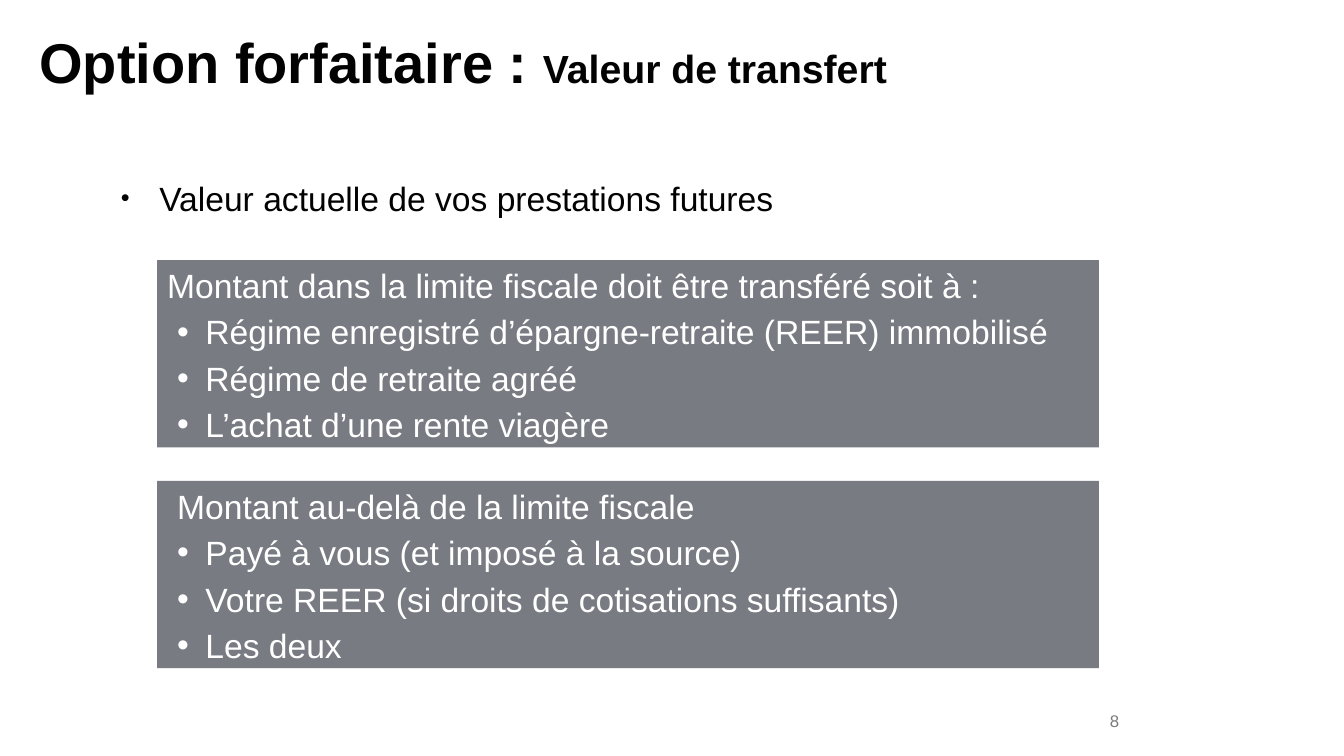
"""Build the slide on the transfer value of the lump-sum option."""
import lxml.etree
import pptx
import pptx.dml.color
import pptx.enum.shapes
import pptx.enum.text
import pptx.oxml.ns
import pptx.util

WIDE, HIGH = 13.33, 7.5
FONT = "Arial"
HUES = {"ink": "020202", "panel": "4B4F59", "white": "FFFFFF", "number": "797B7D"}
ALIGN = pptx.enum.text.PP_ALIGN
ANCHOR = pptx.enum.text.MSO_ANCHOR
PANELS = [
    ("Montant dans la limite fiscale doit être transféré soit à :", 0,
     ["Régime enregistré d’épargne-retraite (REER) immobilisé",
      "Régime de retraite agréé",
      "L’achat d’une rente viagère"]),
    ("Montant au-delà de la limite fiscale", 0.1,
     ["Payé à vous (et imposé à la source)",
      "Votre REER (si droits de cotisations suffisants)",
      "Les deux"]),
]


def hue(name):
    """Return a named colour."""
    return pptx.dml.color.RGBColor.from_string(HUES[name])


def span(left, top, width, height):
    """Turn percentages of the slide into lengths."""
    return [pptx.util.Inches(share * side / 100) for share, side in
            zip((left, top, width, height), (WIDE, HIGH, WIDE, HIGH))]


def place(shape, *area):
    """Move a shape to an area given in percentages."""
    shape.left, shape.top, shape.width, shape.height = span(*area)


def setup(frame, anchor=ANCHOR.TOP):
    """Make a text frame wrap and keep its size."""
    frame.word_wrap = True
    frame.auto_size = pptx.enum.text.MSO_AUTO_SIZE.NONE
    frame.vertical_anchor = anchor


def add(parent, tag, **attrs):
    """Append a drawing element with attributes."""
    return lxml.etree.SubElement(parent, pptx.oxml.ns.qn(tag), attrs)


def indent(para, left, hang=0, mark=None, scale=100):
    """Set the indent and the bullet of a paragraph."""
    props = para._p.get_or_add_pPr()
    props.set("marL", str(pptx.util.Inches(left)))
    props.set("indent", str(pptx.util.Inches(hang)))
    if mark:
        add(props, "a:buSzPct", val=str(scale * 1000))
        add(props, "a:buFont", typeface=FONT)
        add(props, "a:buChar", char=mark)
    else:
        add(props, "a:buNone")


def style(para, tone, size=None, bold=False, align=ALIGN.LEFT, lines=1.0):
    """Set the font and spacing of a paragraph."""
    para.alignment = align
    para.line_spacing = lines
    para.space_before = para.space_after = pptx.util.Pt(0)
    font = para.font
    font.name, font.bold = FONT, bold
    font.color.rgb = hue(tone)
    if size:
        font.size = pptx.util.Pt(size)


def head(slide):
    """Write the title in two sizes."""
    title = slide.shapes.title
    place(title, 2.93, 4.67, 78.77, 16.53)
    frame = title.text_frame
    setup(frame)
    frame.margin_left = frame.margin_right = 0
    frame.margin_top = frame.margin_bottom = 0
    para = frame.paragraphs[0]
    style(para, "ink", bold=True, lines=0.9)
    for text, size in (("Option forfaitaire : ", 40), ("Valeur de transfert", 28)):
        run = para.add_run()
        run.text = text
        run.font.size = pptx.util.Pt(size)


def lead(slide):
    """Write the opening bullet."""
    body = slide.placeholders[1]
    place(body, 4.5, 22.8, 54.16, 16.13)
    setup(body.text_frame)
    para = body.text_frame.paragraphs[0]
    para.text = "Valeur actuelle de vos prestations futures"
    indent(para, 0.88, -0.38, "•", 75)
    style(para, "ink", 24)


def panel(slide, top, intro, inset, items):
    """Draw a translucent panel with an intro and bullets."""
    box = slide.shapes.add_shape(
        pptx.enum.shapes.MSO_SHAPE.RECTANGLE, *span(11.7, top, 70.07, 24.8))
    box.shadow.inherit = False
    box.line.fill.background()
    box.fill.solid()
    box.fill.fore_color.rgb = hue("panel")
    add(box.fill._xPr.find(".//" + pptx.oxml.ns.qn("a:srgbClr")),
        "a:alpha", val="75000")
    frame = box.text_frame
    setup(frame)
    para = frame.paragraphs[0]
    para.text = intro
    indent(para, inset)
    style(para, "white", 24)
    for item in items:
        para = frame.add_paragraph()
        para.text = item
        indent(para, 0.38, -0.28, "•")
        style(para, "white", 24, lines=1.15)


def number(slide, text):
    """Write the page number."""
    box = slide.shapes.add_textbox(*span(72.24, 92.67, 11.78, 5.33))
    setup(box.text_frame, ANCHOR.MIDDLE)
    para = box.text_frame.paragraphs[0]
    para.text = text
    style(para, "number", 12, align=ALIGN.RIGHT)


def main():
    """Build and save the deck."""
    deck = pptx.Presentation()
    deck.slide_width = pptx.util.Inches(WIDE)
    deck.slide_height = pptx.util.Inches(HIGH)
    slide = deck.slides.add_slide(deck.slide_layouts[1])
    head(slide)
    lead(slide)
    for row, (intro, inset, items) in enumerate(PANELS):
        panel(slide, 34.4 + 29.2 * row, intro, inset, items)
    number(slide, "8")
    deck.save("out.pptx")


if __name__ == "__main__":
    main()
